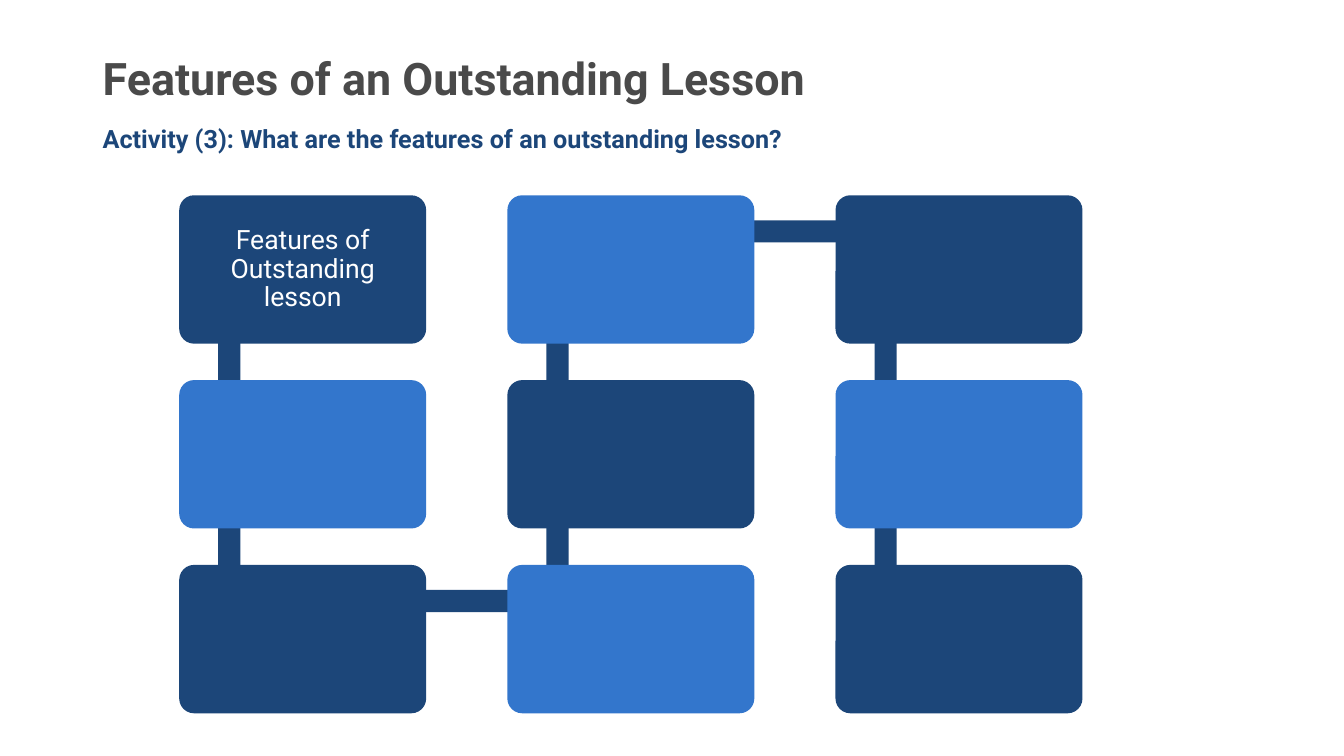
import itertools
from dataclasses import dataclass

import pptx
import pptx.dml.color
import pptx.enum.shapes
import pptx.enum.text
import pptx.util

Pt = pptx.util.Pt
MSO_SHAPE = pptx.enum.shapes.MSO_SHAPE
ANCHOR = pptx.enum.text.MSO_ANCHOR
ALIGN = pptx.enum.text.PP_ALIGN


@dataclass(frozen=True)
class Theme:
    font: str = "Roboto"
    grey: str = "4A4A4A"
    navy: str = "1C4679"
    blue: str = "3376CC"
    white: str = "FFFFFF"
    title_size: float = 32
    activity_size: float = 18
    card_size: float = 19


THEME = Theme()


def rgb(colour):
    return pptx.dml.color.RGBColor.from_string(colour)


def write(frame, text, size, colour, bold=False, align=ALIGN.LEFT, anchor=ANCHOR.TOP):
    frame.word_wrap = True
    frame.auto_size = pptx.enum.text.MSO_AUTO_SIZE.NONE
    frame.vertical_anchor = anchor
    paragraph = frame.paragraphs[0]
    paragraph.alignment = align
    paragraph.line_spacing = 0.9
    run = paragraph.add_run()
    run.text = text
    run.font.name = THEME.font
    run.font.size = Pt(size)
    run.font.bold = bold
    run.font.color.rgb = rgb(colour)


def add_block(slide, kind, left, top, width, height, colour):
    block = slide.shapes.add_shape(kind, Pt(left), Pt(top), Pt(width), Pt(height))
    block.shadow.inherit = False
    block.fill.solid()
    block.fill.fore_color.rgb = rgb(colour)
    block.line.fill.background()
    return block


def add_heading(slide, left, top, width):
    """Title with the activity question right below it."""
    title_height = 58.3
    title = slide.shapes.title
    title.left, title.top = Pt(left), Pt(top)
    title.width, title.height = Pt(width), Pt(title_height)
    write(title.text_frame, "Features of an Outstanding Lesson",
          THEME.title_size, THEME.grey, bold=True, anchor=ANCHOR.MIDDLE)
    activity = slide.shapes.add_textbox(
        Pt(left), Pt(top + title_height), Pt(711.4), Pt(36.7))
    write(activity.text_frame,
          "Activity (3): What are the features of an outstanding lesson?",
          THEME.activity_size, THEME.navy, bold=True)


def add_snake(slide, left, top, width, height):
    """Nine cards joined by a path: down, up, then down again."""
    count = 3
    card_width, card_height = 176.4, 106
    step_x = (width - card_width) / (count - 1)
    step_y = (height - card_height) / (count - 1)
    cards = []
    for column in range(count):
        rows = range(count) if column % 2 == 0 else reversed(range(count))
        cards += [(left + column * step_x, top + row * step_y) for row in rows]

    # Links run between the same inner point of successive cards
    link, inner_x, inner_y = 15.84, 35.8, 25.8
    for (x1, y1), (x2, y2) in itertools.pairwise(cards):
        across = x1 != x2
        start_x = min(x1, x2) + inner_x - (0 if across else link / 2)
        start_y = min(y1, y2) + inner_y - (link / 2 if across else 0)
        add_block(slide, MSO_SHAPE.RECTANGLE, start_x, start_y,
                  abs(x2 - x1) or link, abs(y2 - y1) or link, THEME.navy)

    # Cards alternate in colour along the path; the first is labelled
    for index, (x, y) in enumerate(cards):
        card = add_block(slide, MSO_SHAPE.ROUNDED_RECTANGLE, x, y, card_width,
                         card_height, THEME.blue if index % 2 else THEME.navy)
        card.adjustments[0] = 0.1
        if index == 0:
            frame = card.text_frame
            frame.margin_left = frame.margin_right = Pt(9)
            write(frame, "Features of Outstanding lesson", THEME.card_size,
                  THEME.white, align=ALIGN.CENTER, anchor=ANCHOR.MIDDLE)


def main():
    deck = pptx.Presentation()
    deck.slide_width, deck.slide_height = Pt(960), Pt(540)
    slide = deck.slides.add_slide(deck.slide_layouts.get_by_name("Title Only"))
    add_heading(slide, 66.2, 28.8, 802.8)
    add_snake(slide, 128, 139.5, 645.2, 370)
    deck.save("out.pptx")


if __name__ == "__main__":
    main()
